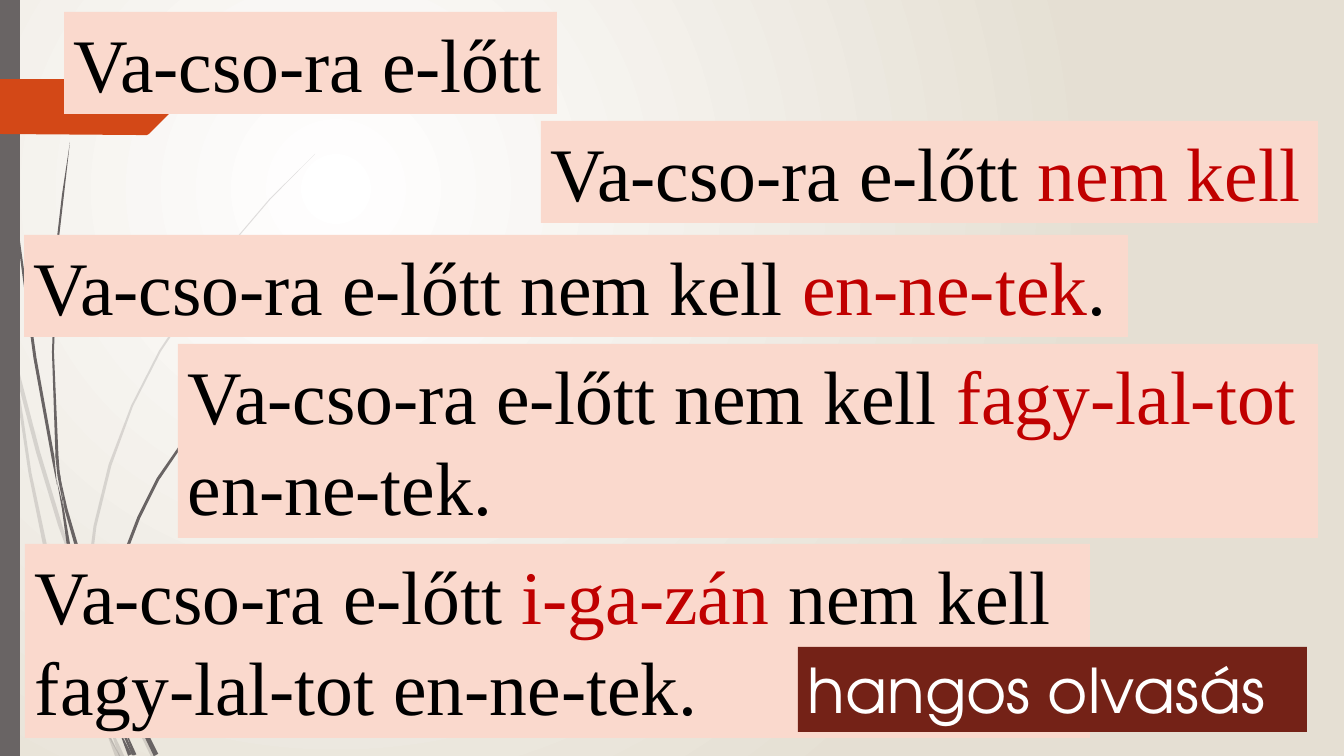
from math import hypot

from lxml.etree import SubElement
from pptx import Presentation
from pptx.dml.color import RGBColor
from pptx.enum.shapes import MSO_SHAPE
from pptx.enum.text import MSO_AUTO_SIZE
from pptx.oxml.ns import qn
from pptx.util import Pt

PX = 914400 / 100.8
WIDTH, HEIGHT = 1344, 756
COLORS = {
    "white": "FFFFFF", "sand": "E5DFD3", "gray": "696464", "orange": "D34817",
    "peach": "FAD9CD", "black": "000000", "red": "C00000", "brown": "742217",
}

# Reading cards: box in px, then lines of (text, color) pieces
CARDS = [
    ((64, 12, 493, 102), [[("Va-cso-ra e-lőtt", "black")]]),
    ((541, 121, 777, 102), [[("Va-cso-ra e-lőtt ", "black"), ("nem kell", "red")]]),
    ((24, 235, 1104, 102), [[("Va-cso-ra e-lőtt nem kell ", "black"),
                             ("en-ne-tek", "red"), (".", "black")]]),
    ((178, 344, 1140, 194), [[("Va-cso-ra e-lőtt nem kell ", "black"),
                              ("fagy-lal-tot", "red")],
                             [("en-ne-tek.", "black")]]),
    ((25, 544, 1065, 194), [[("Va-cso-ra e-lőtt ", "black"), ("i-ga-zán", "red"),
                             (" nem kell", "black")],
                            [("fagy-lal-tot en-ne-tek.", "black")]]),
]
LABEL = ((798, 647, 509, 85), [[("hangos olvasás", "white")]])

# Grass blades: points along the spine as (x, y, thickness) in px
PALE_BLADES = [
    [(0, 293, 4), (6, 324, 3), (11, 353, 0)],
    [(14, 348, 0), (19, 379, 4), (38, 452, 4), (60, 525, 4), (85, 600, 0)],
    [(89, 601, 0), (91, 612, 4), (125, 698, 4), (154, 757, 5)],
    [(106, 717, 0), (122, 757, 5)],
    [(11, 353, 0), (16, 379, 3), (30, 473, 3), (46, 550, 4), (68, 625, 5),
     (102, 720, 0)],
    [(87, 600, 0), (87, 589, 3), (95, 526, 3), (110, 465, 3), (132, 406, 2),
     (160, 351, 2), (230, 246, 1), (270, 199, 1), (315, 154, 0)],
    [(102, 720, 0), (118, 757, 5)],
    [(94, 688, 0), (98, 707, 3), (107, 732, 2), (120, 757, 0)],
]
DARK_BLADES = [
    [(4, 0, 1), (8, 110, 2), (18, 234, 2), (35, 358, 3), (53, 457, 3), (57, 485, 0)],
    [(60, 476, 0), (66, 509, 3), (91, 596, 4), (107, 650, 0)],
    [(111, 646, 0), (113, 660, 3), (135, 712, 4), (156, 755, 5)],
    [(57, 481, 0), (63, 509, 2), (71, 561, 4), (96, 663, 4), (117, 728, 0)],
    [(70, 142, 0), (63, 195, 2), (57, 247, 2), (53, 352, 2), (57, 455, 3), (60, 476, 0)],
    [(123, 725, 0), (135, 755, 3)],
    [(55, 453, 0), (59, 476, 3), (64, 509, 0)],
    [(109, 646, 0), (108, 638, 4), (113, 596, 3), (124, 556, 3), (139, 517, 3),
     (158, 479, 3), (206, 409, 2), (232, 377, 1), (262, 347, 0)],
    [(118, 728, 0), (130, 755, 4)],
    [(111, 697, 0), (117, 718, 3), (133, 755, 2)],
]
ARROW = [(0, 79), (147, 79), (149, 80), (174, 105), (175, 107), (174, 109),
         (149, 134), (147, 135), (137, 135), (0, 134)]


def emu(*lengths):
    return [round(length * PX) for length in lengths]


def rgb(name):
    return RGBColor.from_string(COLORS[name])


def paint(shape, color, opacity=100):
    shape.shadow.inherit = False
    shape.fill.solid()
    shape.fill.fore_color.rgb = rgb(color)
    shape.line.fill.background()
    if opacity < 100:
        color_element = shape.fill._xPr.find(qn("a:solidFill"))[0]
        SubElement(color_element, qn("a:alpha")).set("val", str(opacity * 1000))


def add_outline(shapes, points, color, opacity=100):
    corners = [emu(*point) for point in points]
    builder = shapes.build_freeform(*corners[0], scale=1)
    builder.add_line_segments(corners[1:], close=True)
    paint(builder.convert_to_shape(), color, opacity)


def blade_outline(spine):
    """Both edges of a blade; a tip of no thickness is a single point."""
    left, right = [], []
    neighbours = zip(spine[:1] + spine, spine, spine[1:] + spine[-1:])
    for before, (x, y, thickness), after in neighbours:
        dx, dy = after[0] - before[0], after[1] - before[1]
        reach = thickness / 2 / hypot(dx, dy)
        left.append((x - dy * reach, y + dx * reach))
        if thickness:
            right.append((x + dy * reach, y - dx * reach))
    return left + right[::-1]


def add_text(shapes, box, lines, fill, font, size, wrap):
    shape = shapes.add_textbox(*emu(*box))
    paint(shape, fill)
    frame = shape.text_frame
    frame.word_wrap = wrap
    frame.auto_size = MSO_AUTO_SIZE.SHAPE_TO_FIT_TEXT
    for index, pieces in enumerate(lines):
        paragraph = frame.add_paragraph() if index else frame.paragraphs[0]
        for text, color in pieces:
            run = paragraph.add_run()
            run.text = text
            run.font.name = font
            run.font.size = Pt(size)
            run.font.color.rgb = rgb(color)


def set_background(slide):
    fill = slide.background.fill
    fill.gradient()
    for stop, color, position in zip(fill.gradient_stops, ("white", "sand"), (0, 1)):
        stop.color.rgb = rgb(color)
        stop.position = position
    gradient = slide.background._cSld.find(".//" + qn("a:gradFill"))
    gradient.remove(gradient.find(qn("a:lin")))
    path = SubElement(gradient, qn("a:path"))
    path.set("path", "circle")
    center = SubElement(path, qn("a:fillToRect"))
    for side, value in zip("ltrb", (50, 50, 100, 100)):
        center.set(side, str(value * 1000))


def main():
    presentation = Presentation()
    presentation.slide_width, presentation.slide_height = emu(WIDTH, HEIGHT)
    slide = presentation.slides.add_slide(presentation.slide_layouts[6])
    shapes = slide.shapes
    set_background(slide)

    # Grass, side bar and arrow
    for blades, opacity in ((PALE_BLADES, 20), (DARK_BLADES, 100)):
        group = shapes.add_group_shape()
        for spine in blades:
            add_outline(group.shapes, blade_outline(spine), "gray", opacity)
    paint(shapes.add_shape(MSO_SHAPE.RECTANGLE, *emu(0, 0, 20, HEIGHT)), "gray")
    add_outline(shapes, ARROW, "orange")

    # Reading cards and label
    for box, lines in CARDS:
        add_text(shapes, box, lines, fill="peach", font="Times New Roman", size=54,
                 wrap=False)
    add_text(shapes, *LABEL, fill="brown", font="TeX Gyre Adventor", size=44, wrap=True)

    presentation.save("out.pptx")


if __name__ == "__main__":
    main()
